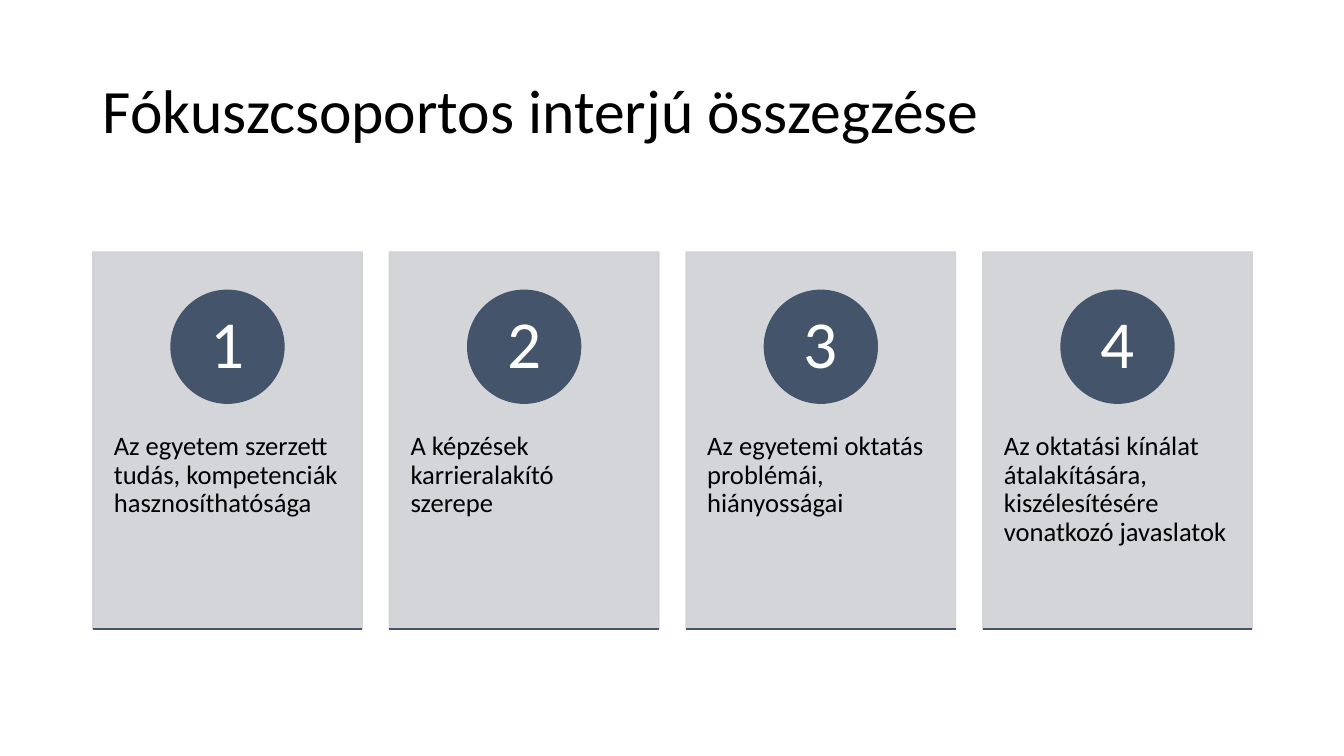
from dataclasses import dataclass

from pptx import Presentation
from pptx.dml.color import RGBColor
from pptx.enum.shapes import MSO_CONNECTOR as Connector, MSO_SHAPE as Shape
from pptx.enum.text import MSO_ANCHOR as Anchor, PP_ALIGN as Align
from pptx.oxml.ns import qn
from pptx.util import Inches, Pt
from lxml.etree import SubElement


@dataclass(frozen=True)
class Theme:
    font: str = "Calibri"
    ink: RGBColor = RGBColor(0x00, 0x00, 0x00)
    light: RGBColor = RGBColor(0xFF, 0xFF, 0xFF)
    card: RGBColor = RGBColor(0xCF, 0xD1, 0xD4)
    accent: RGBColor = RGBColor(0x44, 0x54, 0x6A)
    card_alpha: int = 90
    title_size: int = 44
    number_size: int = 48
    body_size: int = 19
    line_width: int = 1


THEME = Theme()

TITLE = "Fókuszcsoportos interjú összegzése"
TOPICS = [
    "Az egyetem szerzett tudás, kompetenciák hasznosíthatósága",
    "A képzések karrieralakító szerepe",
    "Az egyetemi oktatás problémái, hiányosságai",
    "Az oktatási kínálat átalakítására, kiszélesítésére vonatkozó javaslatok",
]


def write(shape, text, size, color, align, anchor, inset_x, inset_y):
    frame = shape.text_frame
    frame.word_wrap = True
    frame.vertical_anchor = anchor
    frame.margin_left = frame.margin_right = Inches(inset_x)
    frame.margin_top = frame.margin_bottom = Inches(inset_y)
    para = frame.paragraphs[0]
    para.alignment = align
    para.line_spacing = 0.9
    span = para.add_run()
    span.text = text
    span.font.name = THEME.font
    span.font.size = Pt(size)
    span.font.color.rgb = color


def add_solid(page, kind, color, left, top, width, height):
    shape = page.shapes.add_shape(
        kind, Inches(left), Inches(top), Inches(width), Inches(height))
    shape.shadow.inherit = False
    shape.fill.solid()
    shape.fill.fore_color.rgb = color
    shape.line.color.rgb = color
    shape.line.width = Pt(THEME.line_width)
    return shape


def make_translucent(shape, percent):
    for color in shape.element.spPr.iter(qn("a:srgbClr")):
        SubElement(color, qn("a:alpha"), val=str(percent * 1000))


def add_title(page, left, top, width, height):
    title = page.shapes.title
    title.left, title.top = Inches(left), Inches(top)
    title.width, title.height = Inches(width), Inches(height)
    write(title, TITLE, THEME.title_size, THEME.ink,
          Align.LEFT, Anchor.MIDDLE, 0.1, 0.05)


def add_card(page, number, topic, left, top, width, height):
    # Background panel
    panel = add_solid(page, Shape.RECTANGLE, THEME.card, left, top, width, height)
    make_translucent(panel, THEME.card_alpha)

    # Topic text
    label = page.shapes.add_textbox(
        Inches(left), Inches(top + 1.43), Inches(width), Inches(2.25))
    write(label, topic, THEME.body_size, THEME.ink,
          Align.LEFT, Anchor.TOP, 0.21, 0.36)

    # Number badge, centred across the card
    size = 1.12
    badge = add_solid(page, Shape.OVAL, THEME.accent,
                      left + (width - size) / 2, top + 0.38, size, size)
    write(badge, str(number), THEME.number_size, THEME.light,
          Align.CENTER, Anchor.MIDDLE, 0.09, 0.01)

    # Rule along the bottom edge
    bottom = Inches(top + height)
    rule = page.shapes.add_connector(
        Connector.STRAIGHT, Inches(left), bottom, Inches(left + width), bottom)
    rule.line.color.rgb = THEME.accent
    rule.line.width = Pt(THEME.line_width)
    SubElement(rule.element.spPr, qn("a:effectLst"))


def add_cards(page, left, top, width, height):
    gap = 0.27
    card_width = (width - gap * (len(TOPICS) - 1)) / len(TOPICS)
    for index, topic in enumerate(TOPICS):
        add_card(page, index + 1, topic,
                 left + index * (card_width + gap), top, card_width, height)


def main():
    deck = Presentation()
    deck.slide_width, deck.slide_height = Inches(13.33), Inches(7.5)
    page = deck.slides.add_slide(deck.slide_layouts[5])
    add_title(page, 0.92, 0.4, 11.5, 1.45)
    add_cards(page, 0.92, 2.5, 11.5, 3.74)
    deck.save("out.pptx")


if __name__ == "__main__":
    main()
